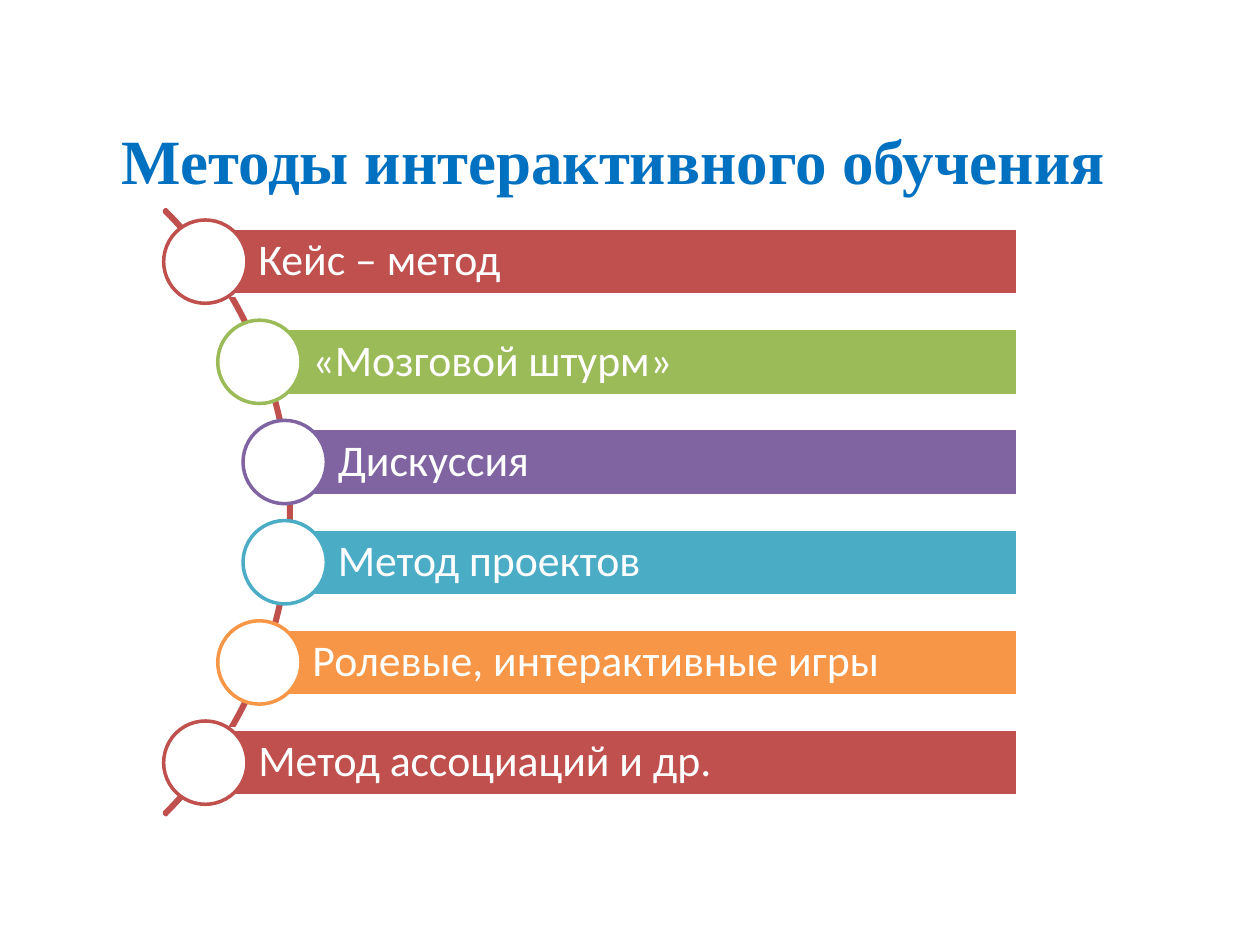
"""Build the slide listing interactive teaching methods along an arc."""
from dataclasses import dataclass

from pptx import Presentation
from pptx import util as u
from pptx.dml.color import RGBColor
from pptx.enum import shapes, text

RED, WHITE = "C0504D", "FFFFFF"
BAR_TOP, BAR_RIGHT, BAR_HEIGHT, PITCH = 4.6, 20.52, 1.35, 2.02
DIAMETER = 1.68


@dataclass
class Method:
    name: str
    left: float
    color: str


METHODS = [
    Method("Кейс – метод", 4.14, RED),
    Method("«Мозговой штурм»", 5.23, "9BBB59"),
    Method("Дискуссия", 5.74, "8064A2"),
    Method("Метод проектов", 5.74, "4BACC6"),
    Method("Ролевые, интерактивные игры", 5.23, "F79646"),
    Method("Метод ассоциаций и др.", 4.14, RED),
]


def rgb(value: str) -> RGBColor:
    return RGBColor.from_string(value)


def apply(target, formats: dict) -> None:
    for name, value in formats.items():
        setattr(target, name, value)


def write(sp, content: str, frame: dict, para: dict, font: dict, color: str) -> None:
    tf = sp.text_frame
    apply(tf, {"word_wrap": True, "vertical_anchor": text.MSO_ANCHOR.MIDDLE, **frame})
    p = tf.paragraphs[0]
    apply(p, para)
    r = p.add_run()
    r.text = content
    apply(r.font, font)
    r.font.color.rgb = rgb(color)


def add_shape(parent, kind, box: tuple, fill: str | None, line: str):
    sp = parent.shapes.add_shape(kind, *map(u.Cm, box))
    sp.shadow.inherit = False
    if fill:
        sp.fill.solid()
        sp.fill.fore_color.rgb = rgb(fill)
    else:
        sp.fill.background()
    sp.line.color.rgb = rgb(line)
    sp.line.width = u.Pt(2)
    return sp


def add_method(parent, method: Method, index: int) -> None:
    top = BAR_TOP + index * PITCH
    bar = add_shape(parent, shapes.MSO_SHAPE.RECTANGLE,
                    (method.left, top, BAR_RIGHT - method.left, BAR_HEIGHT),
                    method.color, WHITE)
    inset = u.Cm(0.18)
    write(bar, method.name,
          {"margin_left": u.Cm(1.07), "margin_right": inset,
           "margin_top": inset, "margin_bottom": inset},
          {"alignment": text.PP_ALIGN.LEFT, "line_spacing": 0.9},
          {"name": "Calibri", "size": u.Pt(25)}, WHITE)
    add_shape(parent, shapes.MSO_SHAPE.OVAL,
              (method.left - DIAMETER / 2, top + (BAR_HEIGHT - DIAMETER) / 2,
               DIAMETER, DIAMETER), WHITE, method.color)


def add_title(slide, content: str) -> None:
    sp = slide.shapes.add_textbox(*map(u.Cm, (-0.3, 2.34, 22.86, 1.63)))
    write(sp, content,
          {"margin_left": u.Cm(2.6), "margin_right": u.Cm(0.13)},
          {"alignment": text.PP_ALIGN.CENTER, "line_spacing": 1.07},
          {"name": "Times New Roman", "size": u.Pt(36), "bold": True}, "0070C0")


def main() -> None:
    prs = Presentation()
    prs.slide_width, prs.slide_height = u.Cm(25.4), u.Cm(19.05)
    slide = prs.slides.add_slide(prs.slide_layouts[6])
    diagram = slide.shapes.add_group_shape()
    arc = add_shape(diagram, shapes.MSO_SHAPE.BLOCK_ARC,
                    (-11.38, 1.7, 17.25, 17.25), None, RED)
    for i, value in enumerate((189, 27, 0.003)):
        arc.adjustments[i] = value
    for i, method in enumerate(METHODS):
        add_method(diagram, method, i)
    add_title(slide, "Методы интерактивного обучения")
    prs.save("out.pptx")


if __name__ == "__main__":
    main()
